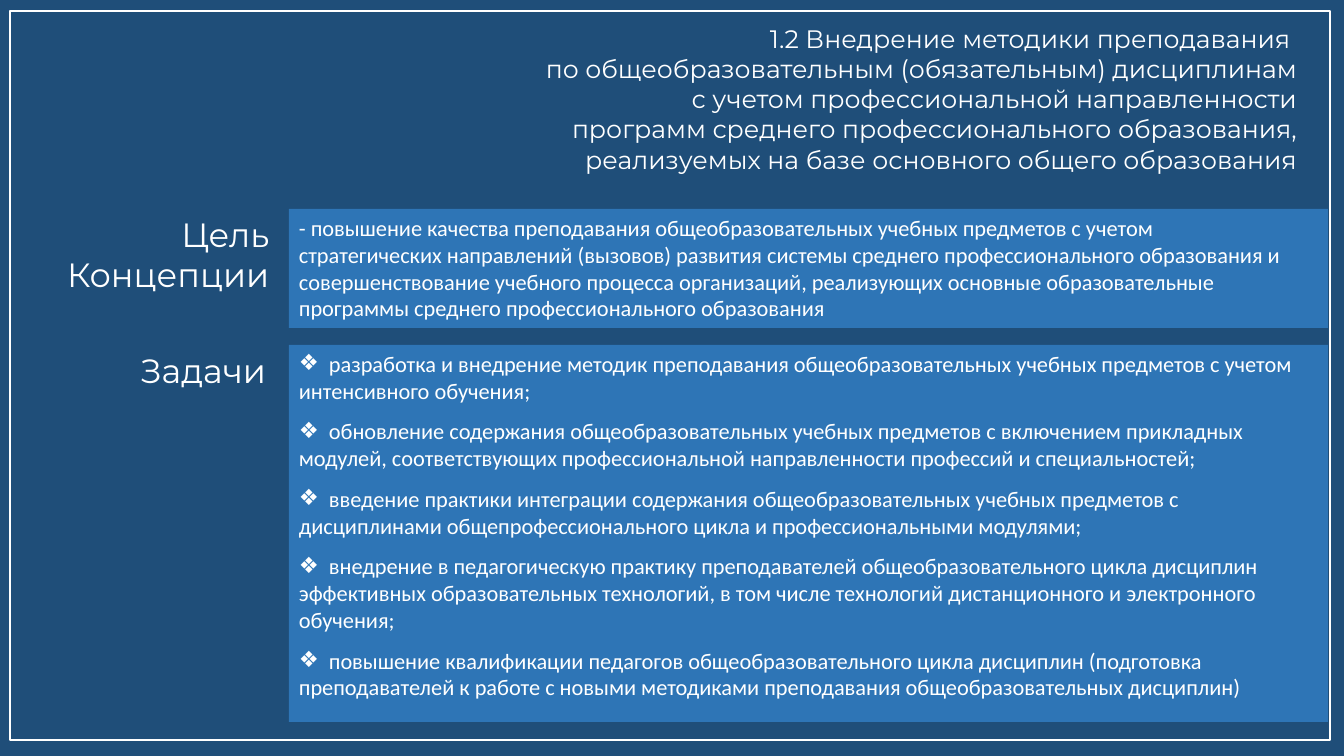
"""Build the slide about the goal and tasks of the teaching concept."""
from dataclasses import dataclass

from lxml.etree import SubElement
from pptx import Presentation
from pptx.dml.color import RGBColor
from pptx.enum.shapes import MSO_SHAPE
from pptx.enum.text import MSO_ANCHOR, PP_ALIGN
from pptx.oxml.ns import qn
from pptx.slide import Slide
from pptx.util import Emu, Pt

EMU_PER_PX = 12192000 / 1344
COLORS = {"background": "1F4E79", "panel": "2E75B6", "white": "FFFFFF"}
BULLET = "❖"
BULLET_TAB = 30


@dataclass(frozen=True)
class Box:
    left: int
    top: int
    width: int
    height: int


@dataclass(frozen=True)
class TextBlock:
    box: Box
    lines: tuple[str, ...]
    size: int
    font: str = "Montserrat"
    align: PP_ALIGN = PP_ALIGN.RIGHT
    fill: str | None = None
    bulleted: bool = False
    gap: float = 0


FRAME = Box(10, 11, 1320, 729)

TITLE = TextBlock(
    Box(6, 18, 1301, 163),
    (
        "1.2 Внедрение методики преподавания ",
        "по общеобразовательным (обязательным) дисциплинам",
        "с учетом профессиональной направленности",
        "программ среднего профессионального образования,",
        "реализуемых на базе основного общего образования",
    ),
    18,
)
GOAL_LABEL = TextBlock(Box(45, 209, 243, 92), ("Цель ", "Концепции "), 24)
TASKS_LABEL = TextBlock(Box(118, 345, 158, 50), ("Задачи",), 24)
GOAL = TextBlock(
    Box(289, 209, 1039, 119),
    (
        "- повышение качества преподавания общеобразовательных учебных предметов с учетом",
        "стратегических направлений (вызовов) развития системы среднего "
        "профессионального образования и",
        "совершенствование учебного процесса организаций, реализующих основные "
        "образовательные программы среднего профессионального образования",
    ),
    16, "Calibri", PP_ALIGN.LEFT, "panel",
)
TASKS = TextBlock(
    Box(289, 345, 1039, 377),
    (
        "разработка и внедрение методик преподавания общеобразовательных учебных "
        "предметов с учетом интенсивного обучения;",
        "обновление содержания общеобразовательных учебных предметов с включением "
        "прикладных модулей, соответствующих профессиональной направленности "
        "профессий и специальностей;",
        "введение практики интеграции содержания общеобразовательных учебных "
        "предметов с дисциплинами общепрофессионального цикла и профессиональными "
        "модулями;",
        "внедрение в педагогическую практику преподавателей общеобразовательного "
        "цикла дисциплин эффективных образовательных технологий, в том числе "
        "технологий дистанционного и электронного обучения;",
        "повышение квалификации педагогов общеобразовательного цикла дисциплин "
        "(подготовка преподавателей к работе с новыми методиками преподавания "
        "общеобразовательных дисциплин)",
    ),
    16, "Calibri", PP_ALIGN.LEFT, "panel", bulleted=True, gap=9.8,
)


def px(value: int) -> Emu:
    """Turn pixels into EMU."""
    return Emu(round(value * EMU_PER_PX))


def place(box: Box) -> tuple[Emu, Emu, Emu, Emu]:
    """Return the left, top, width and height of a box in EMU."""
    return px(box.left), px(box.top), px(box.width), px(box.height)


def color(name: str) -> RGBColor:
    """Look up a named colour."""
    return RGBColor.from_string(COLORS[name])


def add_bullet(paragraph) -> None:
    """Give a paragraph a bullet and a tab stop for its first line."""
    properties = paragraph._p.get_or_add_pPr()
    properties.set("marL", "0")
    properties.set("indent", "0")
    SubElement(properties, qn("a:buFont"), typeface="Calibri")
    SubElement(properties, qn("a:buChar"), char=BULLET)
    tabs = SubElement(properties, qn("a:tabLst"))
    SubElement(tabs, qn("a:tab"), pos=str(px(BULLET_TAB)), algn="l")


def add_frame(slide: Slide) -> None:
    """Draw the thin frame around the slide."""
    shape = slide.shapes.add_shape(MSO_SHAPE.RECTANGLE, *place(FRAME))
    shape.shadow.inherit = False
    shape.fill.background()
    shape.line.color.rgb = color("white")
    shape.line.width = Pt(1)


def add_text_block(slide: Slide, block: TextBlock) -> None:
    """Draw a text box, or a filled panel, with its paragraphs."""
    if block.fill:
        shape = slide.shapes.add_shape(MSO_SHAPE.RECTANGLE, *place(block.box))
        shape.shadow.inherit = False
        shape.fill.solid()
        shape.fill.fore_color.rgb = color(block.fill)
        shape.line.fill.background()
    else:
        shape = slide.shapes.add_textbox(*place(block.box))
    text_frame = shape.text_frame
    text_frame.word_wrap = True
    text_frame.vertical_anchor = MSO_ANCHOR.TOP
    prefix = "\t" if block.bulleted else ""
    text_frame.text = "\n".join(prefix + line for line in block.lines)
    for index, paragraph in enumerate(text_frame.paragraphs):
        if block.bulleted:
            add_bullet(paragraph)
        paragraph.alignment = block.align
        if index and block.gap:
            paragraph.space_before = Pt(block.gap)
        for run in paragraph.runs:
            run.font.name = block.font
            run.font.size = Pt(block.size)
            run.font.color.rgb = color("white")


def main() -> None:
    """Build and save the presentation."""
    presentation = Presentation()
    presentation.slide_width = px(1344)
    presentation.slide_height = px(756)
    slide = presentation.slides.add_slide(presentation.slide_layouts[6])
    slide.background.fill.solid()
    slide.background.fill.fore_color.rgb = color("background")
    add_frame(slide)
    for block in (TITLE, GOAL, GOAL_LABEL, TASKS_LABEL, TASKS):
        add_text_block(slide, block)
    presentation.save("out.pptx")


if __name__ == "__main__":
    main()
